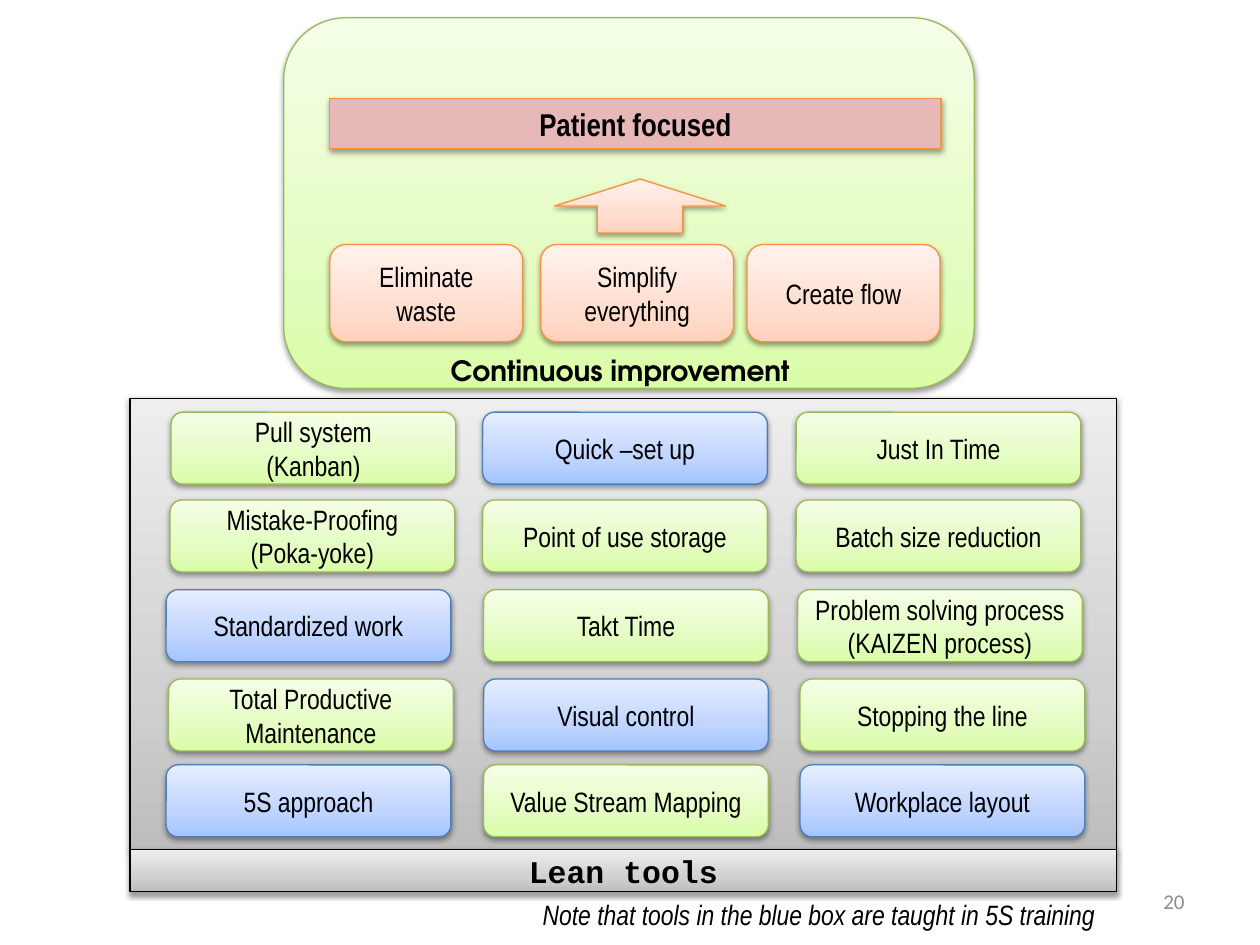
"""Build the lean house slide: goals above, a grid of lean tools below."""
import lxml.etree
import pptx
import pptx.dml.color
import pptx.enum.shapes
import pptx.enum.text
import pptx.oxml
import pptx.oxml.ns
import pptx.util

Cm = pptx.util.Cm
SHAPES = pptx.enum.shapes.MSO_SHAPE
ALIGN = pptx.enum.text.PP_ALIGN
ANCHOR = pptx.enum.text.MSO_ANCHOR
RGB = pptx.dml.color.RGBColor.from_string

COLORS = {"text": "000000", "page number": "8C8C8C"}
STYLES = {
    "gray": {"line": "000000", "stops": ("BDBDBD", "D1D1D1", "EEEEEE")},
    "green": {"line": "98B955", "stops": ("DAFDA7", "E4FCC2", "F5FFE7")},
    "blue": {"line": "4B7EBC", "stops": ("A4C4FF", "BFD4FF", "E6EEFF")},
    "orange": {"line": "F69240", "stops": ("FFD2BD", "FFDED0", "FFF2ED")},
    "rose": {"line": "F69240", "stops": ("E6B9B8",)},
}
STOP_POSITIONS = (0, 35, 100)

GOALS = [(6.65, "Eliminate waste"), (10.9, "Simplify\neverything"), (15.06, "Create flow")]
GOAL_TOP, GOAL_SIZE = 4.93, (3.89, 1.96)

TOOL_SIZE = (5.74, 1.45)
TOOL_ROWS = [
    (8.31, (3.45, 9.73, 16.05), ("Pull system\n(Kanban)", "Quick –set up", "Just In Time")),
    (10.08, (3.43, 9.73, 16.05),
     ("Mistake-Proofing\n(Poka-yoke)", "Point of use storage", "Batch size reduction")),
    (11.89, (3.35, 9.75, 16.08),
     ("Standardized work", "Takt Time", "Problem solving process\n(KAIZEN process)")),
    (13.69, (3.4, 9.75, 16.13),
     ("Total Productive Maintenance", "Visual control", "Stopping the line")),
    (15.42, (3.35, 9.75, 16.13), ("5S approach", "Value Stream Mapping", "Workplace layout")),
]
TAUGHT_IN_5S = {"Quick –set up", "Standardized work", "Visual control", "5S approach",
                "Workplace layout"}


def write_text(shape, text, size=16, font="Arial Narrow", color="text", align=ALIGN.CENTER,
               anchor=ANCHOR.MIDDLE, bold=False, italic=False, wrap=True):
    """Fill a shape with uniformly formatted paragraphs."""
    frame = shape.text_frame
    frame.text = text
    frame.word_wrap = wrap
    frame.vertical_anchor = anchor
    for paragraph in frame.paragraphs:
        paragraph.alignment = align
        for run in paragraph.runs:
            run.font.name = font
            run.font.size = pptx.util.Pt(size)
            run.font.bold = bold
            run.font.italic = italic
            run.font.color.rgb = RGB(COLORS[color])


def fill_gradient(shape, stops):
    """Fill a shape with a gradient that runs from bottom to top."""
    shape.fill.gradient()
    gradient = shape._element.spPr.find(pptx.oxml.ns.qn("a:gradFill"))
    stop_list = gradient.find(pptx.oxml.ns.qn("a:gsLst"))
    for old_stop in list(stop_list):
        stop_list.remove(old_stop)
    for position, color in zip(STOP_POSITIONS, stops):
        stop = lxml.etree.SubElement(stop_list, pptx.oxml.ns.qn("a:gs"), pos=str(position * 1000))
        lxml.etree.SubElement(stop, pptx.oxml.ns.qn("a:srgbClr"), val=color)
    gradient.find(pptx.oxml.ns.qn("a:lin")).set("ang", "16200000")


def add_shadow(shape):
    """Give a shape a soft shadow below it."""
    shape.shadow.inherit = False
    effects = shape._element.spPr.find(pptx.oxml.ns.qn("a:effectLst"))
    shadow = lxml.etree.SubElement(effects, pptx.oxml.ns.qn("a:outerShdw"), blurRad="40000",
                                   dist="20000", dir="5400000", rotWithShape="0")
    color = lxml.etree.SubElement(shadow, pptx.oxml.ns.qn("a:srgbClr"), val=COLORS["text"])
    lxml.etree.SubElement(color, pptx.oxml.ns.qn("a:alpha"), val="38000")


def add_block(slide, kind, style, left, top, width, height, text="", **text_format):
    """Add a shadowed block in one of the named styles."""
    shape = slide.shapes.add_shape(kind, Cm(left), Cm(top), Cm(width), Cm(height))
    stops = STYLES[style]["stops"]
    if len(stops) == 1:
        shape.fill.solid()
        shape.fill.fore_color.rgb = RGB(stops[0])
    else:
        fill_gradient(shape, stops)
    shape.line.color.rgb = RGB(STYLES[style]["line"])
    shape.line.width = pptx.util.Pt(0.75)
    add_shadow(shape)
    if text:
        write_text(shape, text, **text_format)
    return shape


def add_label(slide, left, top, width, height, text, **text_format):
    """Add a plain text box."""
    label = slide.shapes.add_textbox(Cm(left), Cm(top), Cm(width), Cm(height))
    write_text(label, text, **text_format)


def main():
    """Build and save the presentation."""
    presentation = pptx.Presentation()
    presentation.slide_width, presentation.slide_height = Cm(25.4), Cm(19.05)
    slide = presentation.slides.add_slide(presentation.slide_layouts[6])

    add_block(slide, SHAPES.RECTANGLE, "gray", 2.62, 8.03, 19.89, 9.09)
    roof = add_block(slide, SHAPES.ROUNDED_RECTANGLE, "green", 5.72, 0.36, 13.92, 7.47,
                     "Continuous improvement", font="TeX Gyre Adventor", bold=True,
                     anchor=ANCHOR.TOP)
    roof.text_frame.margin_top = Cm(6.4)
    roof.text_frame.margin_bottom = Cm(0)
    roof.text_frame.margin_right = Cm(0.6)
    add_block(slide, SHAPES.RECTANGLE, "rose", 6.65, 1.98, 12.32, 1.02, "Patient focused",
              size=18, bold=True)
    add_block(slide, SHAPES.UP_ARROW, "orange", 11.18, 3.61, 3.45, 1.09)
    for left, goal in GOALS:
        add_block(slide, SHAPES.ROUNDED_RECTANGLE, "orange", left, GOAL_TOP, *GOAL_SIZE, goal)

    for top, lefts, tools in TOOL_ROWS:
        for left, tool in zip(lefts, tools):
            style = "blue" if tool in TAUGHT_IN_5S else "green"
            add_block(slide, SHAPES.ROUNDED_RECTANGLE, style, left, top, *TOOL_SIZE, tool)

    add_label(slide, 10.69, 17.96, 11.91, 0.94,
              "Note that tools in the blue box are taught in 5S training",
              align=ALIGN.LEFT, anchor=ANCHOR.TOP, italic=True, wrap=False)
    add_block(slide, SHAPES.RECTANGLE, "gray", 2.62, 17.12, 19.89, 0.86, "Lean tools",
              size=18, font="Courier New", bold=True)
    add_label(slide, 18.21, 17.65, 5.92, 1.02, "20", size=12, font="Calibri",
              color="page number", align=ALIGN.RIGHT)
    presentation.save("out.pptx")


if __name__ == "__main__":
    main()
